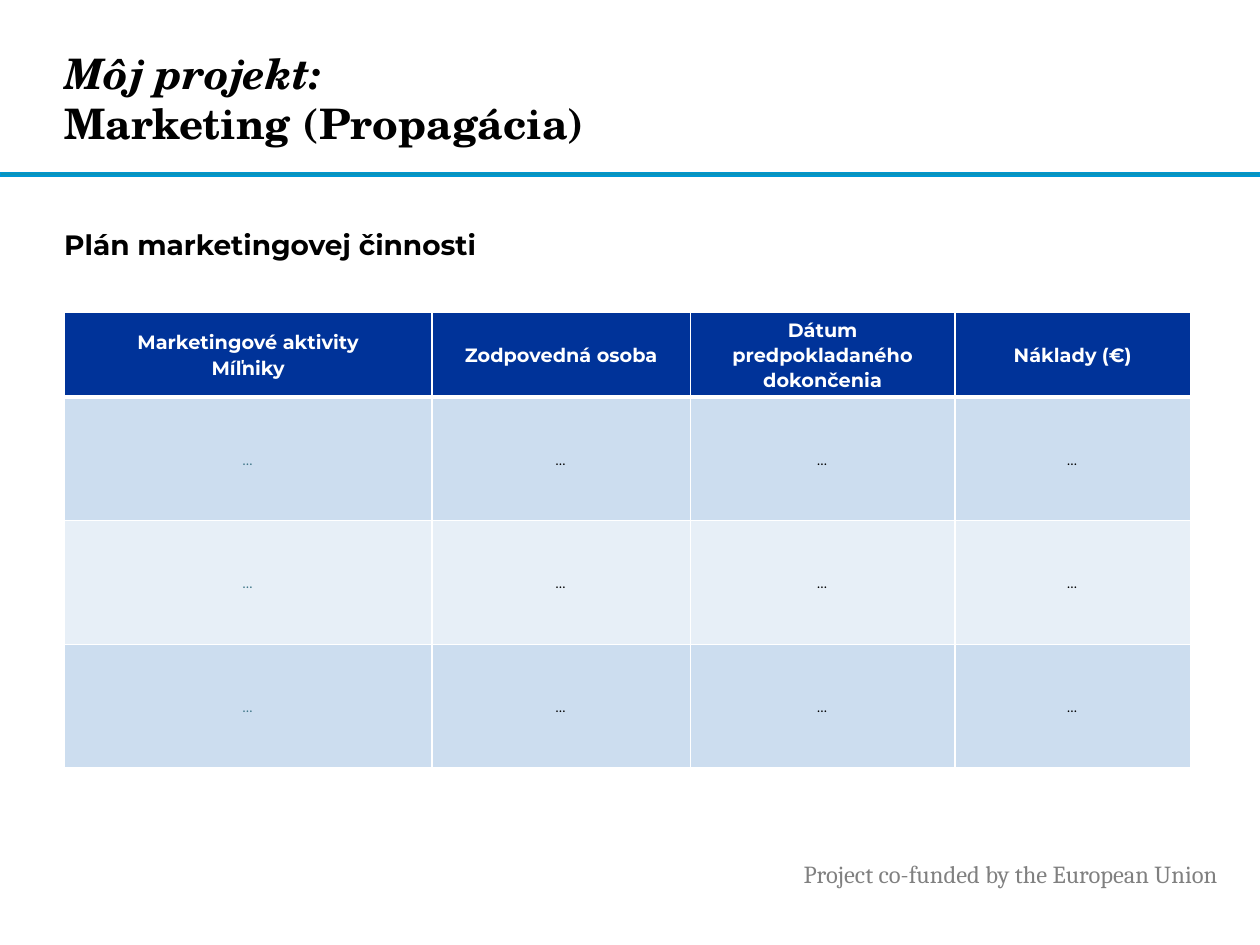
from pptx import Presentation
from pptx.dml.color import RGBColor
from pptx.enum.shapes import MSO_SHAPE
from pptx.enum.text import MSO_ANCHOR as ANCHOR, PP_ALIGN as ALIGN
from pptx.oxml import parse_xml
from pptx.oxml.ns import nsdecls
from pptx.util import Inches, Pt

COLORS = {
    "black": "000000", "white": "FFFFFF", "grey": "808080",
    "rule": "0C94B7", "rule_line": "0096D3", "header": "003399",
    "band_dark": "CCDDEF", "band_light": "E7EFF7", "teal": "3C7486",
}
SERIF, SANS, FOOT = "TeX Gyre Schola", "Montserrat", "Cambria"
HEADERS = [
    ["Marketingové aktivity", "Míľniky"],
    ["Zodpovedná osoba"],
    ["Dátum predpokladaného dokončenia"],
    ["Náklady (€)"],
]
COL_SHARES = [2.92, 2.05, 2.1, 1.87]
ROW_SHARES = [0.67, 0.98, 0.98, 0.98]

prs = Presentation()
prs.slide_width, prs.slide_height = Inches(10), Inches(7.5)


def rgb(name):
    return RGBColor.from_string(COLORS[name])


def area(left, top, width, height):
    w, h = prs.slide_width / 100, prs.slide_height / 100
    return int(left * w), int(top * h), int(width * w), int(height * h)


def add_text(p, text, font=SANS, size=11, color="black", bold=False,
             italic=False, align=ALIGN.LEFT, spacing=None):
    p.alignment = align
    if spacing:
        p.line_spacing = spacing
    r = p.add_run()
    r.text = text
    r.font.name, r.font.size = font, Pt(size)
    r.font.bold, r.font.italic = bold, italic
    r.font.color.rgb = rgb(color)


def set_frame(tf, x=0, y=0, anchor=ANCHOR.TOP):
    tf.word_wrap = True
    tf.margin_left = tf.margin_right = Inches(x)
    tf.margin_top = tf.margin_bottom = Inches(y)
    tf.vertical_anchor = anchor


def place_title(s, box):
    sp = s.shapes.title
    sp.left, sp.top, sp.width, sp.height = box
    set_frame(sp.text_frame, anchor=ANCHOR.MIDDLE)
    p = sp.text_frame.paragraphs[0]
    style = dict(font=SERIF, size=24, bold=True)
    add_text(p, "Môj projekt:", italic=True, **style)
    p.add_line_break()
    add_text(p, "Marketing (Propagácia)", **style)


def place_rule(s, box):
    sp = s.shapes.add_shape(MSO_SHAPE.RECTANGLE, *box)
    sp.shadow.inherit = False
    sp.fill.solid()
    sp.fill.fore_color.rgb = rgb("rule")
    sp.line.color.rgb = rgb("rule_line")
    sp.line.width = Pt(1)


def place_text(s, box, text, x, y, **style):
    tf = s.shapes.add_textbox(*box).text_frame
    set_frame(tf, x, y)
    add_text(tf.paragraphs[0], text, **style)


def set_borders(cell, **widths):
    tcPr = cell._tc.get_or_add_tcPr()
    for i, side in enumerate("LRTB"):
        tcPr.insert(i, parse_xml(
            f'<a:ln{side} {nsdecls("a")} w="{Pt(widths.get(side, 1))}">'
            f'<a:solidFill><a:srgbClr val="{COLORS["white"]}"/></a:solidFill>'
            f'</a:ln{side}>'))


def fill_cell(cell, lines, fill, borders, **style):
    cell.fill.solid()
    cell.fill.fore_color.rgb = rgb(fill)
    cell.vertical_anchor = ANCHOR.MIDDLE
    cell.margin_left = cell.margin_right = Inches(0.07)
    cell.margin_top = cell.margin_bottom = 0
    set_borders(cell, **borders)
    tf = cell.text_frame
    for i, line in enumerate(lines):
        p = tf.add_paragraph() if i else tf.paragraphs[0]
        add_text(p, line, align=ALIGN.CENTER, spacing=1.07, **style)


def place_plan(s, box):
    rows, cols = len(ROW_SHARES), len(COL_SHARES)
    table = s.shapes.add_table(rows, cols, *box).table
    for col, share in zip(table.columns, COL_SHARES):
        col.width = int(box[2] * share / sum(COL_SHARES))
    for row, share in zip(table.rows, ROW_SHARES):
        row.height = int(box[3] * share / sum(ROW_SHARES))
    for c, lines in enumerate(HEADERS):
        fill_cell(table.cell(0, c), lines, "header", {"B": 3},
                  color="white", bold=True)
        for r in range(1, rows):
            fill_cell(table.cell(r, c), ["…"],
                      "band_dark" if r % 2 else "band_light",
                      {"T": 3} if r == 1 else {},
                      size=9, italic=True, color="black" if c else "teal")


def main():
    s = prs.slides.add_slide(prs.slide_layouts[5])
    place_rule(s, area(0, 18.27, 100, 0.4))
    place_text(s, area(62.8, 90.27, 36.6, 4.53),
               "Project co-funded by the European Union", 0.1, 0.05,
               font=FOOT, size=14, color="grey")
    place_text(s, area(5.1, 23.47, 84.9, 67.47),
               "Plán marketingovej činnosti", 0, 0.05, size=16, bold=True)
    place_plan(s, area(5.1, 33.07, 89.4, 48.2))
    place_title(s, area(5.1, 2.4, 72.7, 15.87))
    prs.save("out.pptx")


if __name__ == "__main__":
    main()
